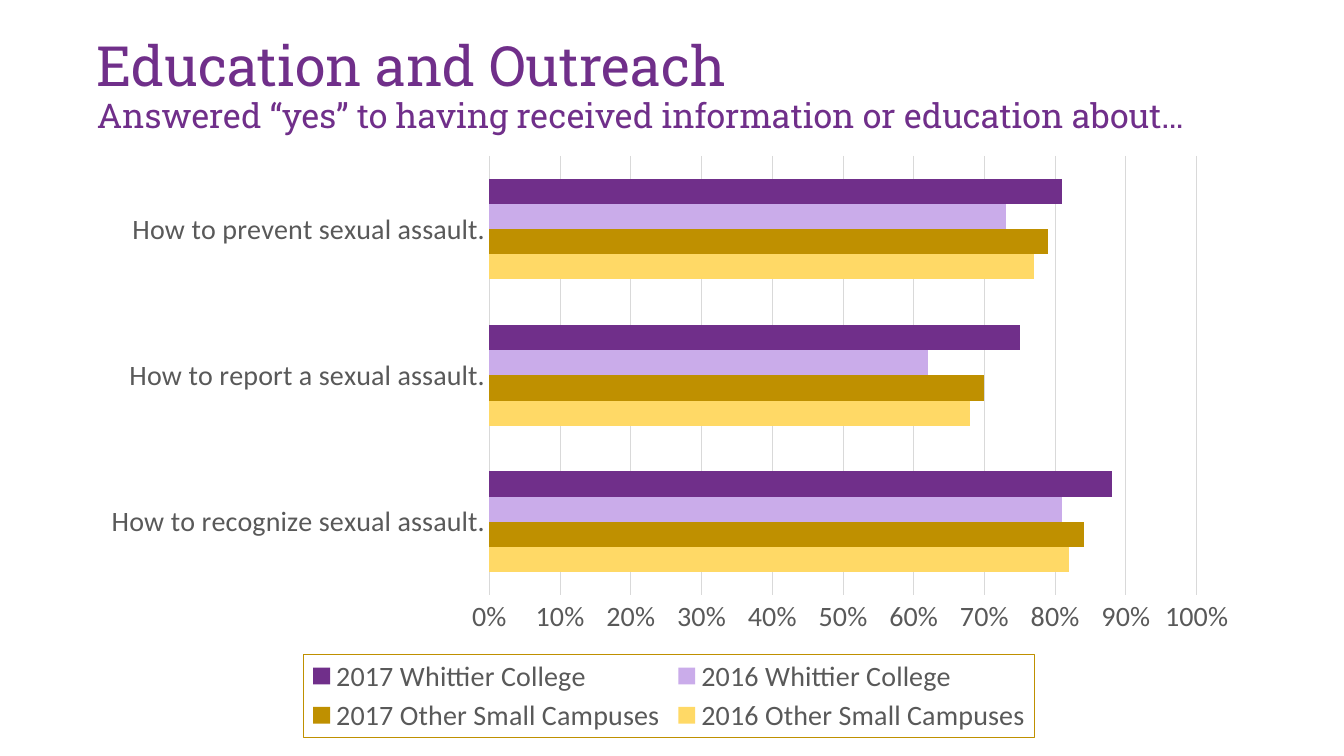
"""Build the Education and Outreach slide with its clustered bar chart."""
from lxml import etree
from pptx import Presentation
from pptx.chart.data import CategoryChartData
from pptx.dml.color import RGBColor
from pptx.enum.chart import XL_CHART_TYPE, XL_LEGEND_POSITION, XL_TICK_MARK
from pptx.enum.text import MSO_ANCHOR, PP_ALIGN
from pptx.oxml import parse_xml
from pptx.util import Inches, Pt

BAR_CLUSTERED = XL_CHART_TYPE.BAR_CLUSTERED
BOTTOM = XL_LEGEND_POSITION.BOTTOM
NO_TICK = XL_TICK_MARK.NONE
MIDDLE = MSO_ANCHOR.MIDDLE
LEFT = PP_ALIGN.LEFT

PURPLE = RGBColor(0x70, 0x2F, 0x8A)
LILAC = RGBColor(0xCA, 0xAC, 0xEA)
GOLD = RGBColor(0xBF, 0x90, 0x00)
YELLOW = RGBColor(0xFF, 0xD9, 0x66)
GREY = RGBColor(0x59, 0x59, 0x59)
PALE_GREY = RGBColor(0xD9, 0xD9, 0xD9)
CHART_NS = "http://schemas.openxmlformats.org/drawingml/2006/chart"
DRAWING_NS = "http://schemas.openxmlformats.org/drawingml/2006/main"


def set_font(font, **values):
    for name, value in values.items():
        if name == "color":
            font.color.rgb = value
        else:
            setattr(font, name, value)


def make_layout(inner, x, y, w, h):
    layout = etree.Element(f"{{{CHART_NS}}}layout")
    manual = etree.SubElement(layout, f"{{{CHART_NS}}}manualLayout")
    settings = {"layoutTarget": "inner"} if inner else {}
    settings |= {"xMode": "edge", "yMode": "edge", "x": x, "y": y, "w": w, "h": h}
    for tag, value in settings.items():
        etree.SubElement(manual, f"{{{CHART_NS}}}{tag}", val=str(value))
    return parse_xml(etree.tostring(layout))


prs = Presentation()
prs.slide_width = Inches(13.33)
prs.slide_height = Inches(7.5)
slide = prs.slides.add_slide(prs.slide_layouts[5])

title = slide.shapes.title
title.left, title.top = Inches(0.86), Inches(0.14)
title.width, title.height = Inches(11.5), Inches(1.45)
title.text_frame.vertical_anchor = MIDDLE
title.text_frame.word_wrap = True
heading = title.text_frame.paragraphs[0]
heading.alignment = LEFT
heading.line_spacing = 0.9
title_lines = [
    ("Education and Outreach", 39.6),
    ("Answered “yes” to having received information or education about…", 24.3),
]
for index, (line, size) in enumerate(title_lines):
    if index:
        heading.add_line_break()
    run = heading.add_run()
    run.text = line
    set_font(run.font, name="Roboto Slab", size=Pt(size), color=PURPLE)

campus_results = [
    ("2016 Other Small Campuses", (0.82, 0.68, 0.77), YELLOW),
    ("2017 Other Small Campuses", (0.84, 0.70, 0.79), GOLD),
    ("2016 Whittier College", (0.81, 0.62, 0.73), LILAC),
    ("2017 Whittier College", (0.88, 0.75, 0.81), PURPLE),
]
survey = CategoryChartData(number_format="0%")
survey.categories = [
    "How to recognize sexual assault.",
    "How to report a sexual assault.",
    "How to prevent sexual assault.",
]
for campus, shares, _ in campus_results:
    survey.add_series(campus, shares)

chart = slide.shapes.add_chart(
    BAR_CLUSTERED, Inches(0.83), Inches(1.43), Inches(11.5), Inches(5.89), survey
).chart
chart.has_title = False
set_font(chart.font, name="Calibri", size=Pt(20), color=GREY)

bars = chart.plots[0]
for name, value in {"gap_width": 182, "overlap": 0, "vary_by_categories": False}.items():
    setattr(bars, name, value)
for series, (_, _, color) in zip(bars.series, campus_results):
    series.format.fill.solid()
    series.format.fill.fore_color.rgb = color

topics, share = chart.category_axis, chart.value_axis
for axis in (topics, share):
    axis.major_tick_mark = axis.minor_tick_mark = NO_TICK
    set_font(axis.tick_labels.font, name="Calibri", size=Pt(20), color=GREY)
share_scale = {"minimum_scale": 0, "maximum_scale": 1, "major_unit": 0.1}
for name, value in share_scale.items():
    setattr(share, name, value)
share.tick_labels.number_format = "0%"
share.tick_labels.number_format_is_linked = False
share.format.line.fill.background()
for line in (topics.format.line, share.major_gridlines.format.line):
    line.color.rgb = PALE_GREY
    line.width = Pt(0.75)

chart.has_legend = True
legend = chart.legend
legend.position = BOTTOM
legend.include_in_layout = False
set_font(legend.font, name="Calibri", size=Pt(20), color=GREY)

legend_xml = legend._element
for old_layout in legend_xml.findall(f"{{{CHART_NS}}}layout"):
    legend_xml.remove(old_layout)
overlay = legend_xml.find(f"{{{CHART_NS}}}overlay")
overlay.addprevious(make_layout(False, 0.19, 0.86, 0.63, 0.14))
overlay.addnext(parse_xml(
    f'<c:spPr xmlns:c="{CHART_NS}" xmlns:a="{DRAWING_NS}"><a:noFill/>'
    f'<a:ln w="9525"><a:solidFill><a:srgbClr val="{GOLD}"/></a:solidFill></a:ln></c:spPr>'
))

plot_area = chart._chartSpace.find(f".//{{{CHART_NS}}}plotArea")
for old_layout in plot_area.findall(f"{{{CHART_NS}}}layout"):
    plot_area.remove(old_layout)
plot_area.insert(0, make_layout(True, 0.35, 0.02, 0.61, 0.74))

prs.save("out.pptx")
